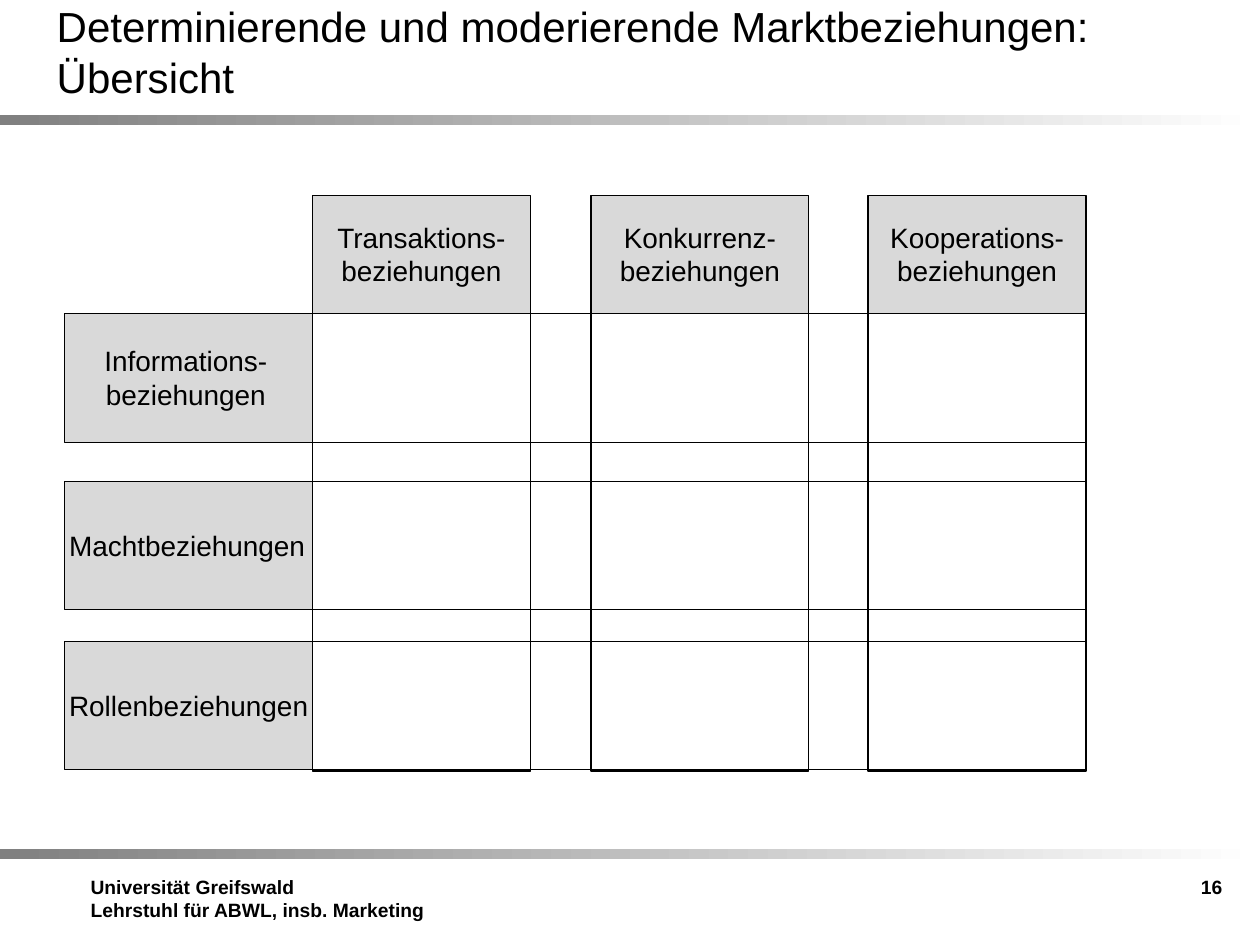
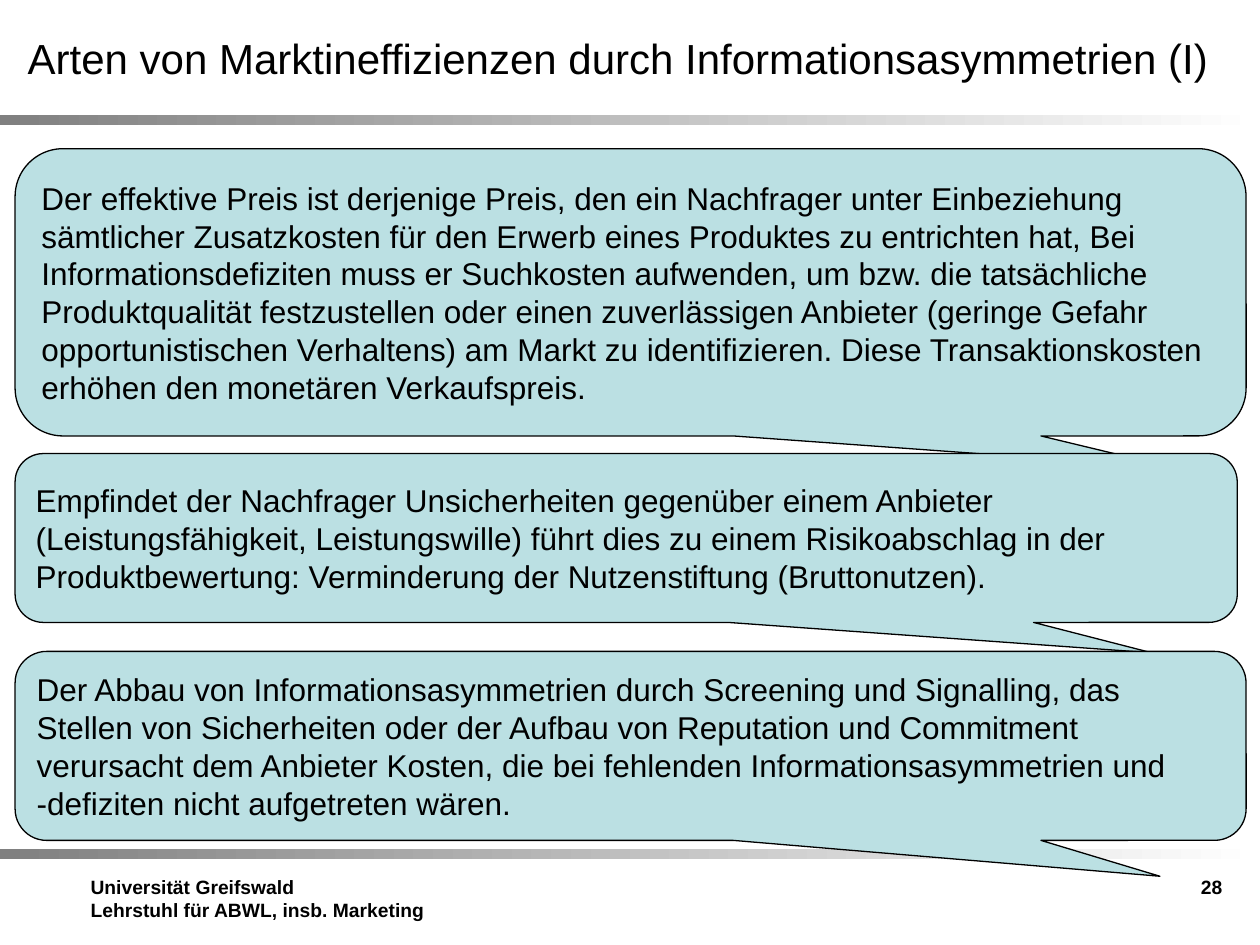
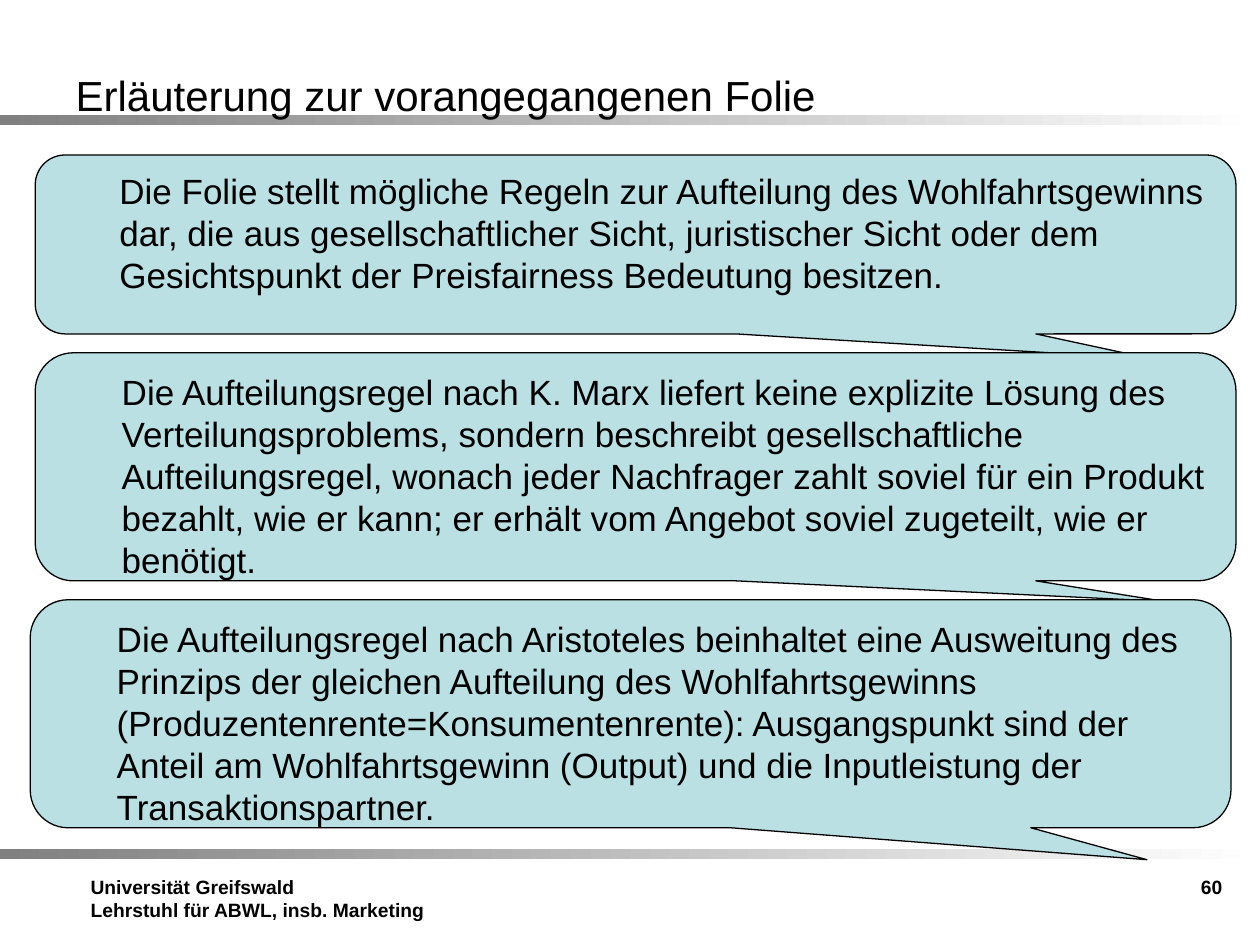
from pptx import Presentation
from pptx.dml.color import RGBColor
from pptx.enum.shapes import MSO_SHAPE
from pptx.enum.text import MSO_ANCHOR, MSO_AUTO_SIZE, PP_ALIGN
from pptx.util import Inches, Pt

BLACK, WHITE = "000000", "FFFFFF"
BAND_GREY, HEADER_GREY, CALLOUT_BLUE = "808080", "D9D9D9", "BBE0E3"
FONT = "Arial"
BAND_TOPS = (0.91, 6.74)
FOOTER = "Universität Greifswald\nLehrstuhl für ABWL, insb. Marketing"


def rgb(value):
    return RGBColor.from_string(value)


def write_text(frame, text, size=16, bold=False, align=PP_ALIGN.LEFT,
               anchor=MSO_ANCHOR.TOP, indent=0):
    frame.word_wrap = True
    frame.auto_size = MSO_AUTO_SIZE.NONE
    frame.vertical_anchor = anchor
    frame.text = text
    for paragraph in frame.paragraphs:
        paragraph.alignment = align
        if indent:
            paragraph.level = 1
            properties = paragraph._p.get_or_add_pPr()
            properties.set("marL", str(Inches(indent)))
            properties.set("indent", "0")
        paragraph.font.name = FONT
        paragraph.font.size = Pt(size)
        paragraph.font.bold = bold
        paragraph.font.color.rgb = rgb(BLACK)


class Deck:
    def __init__(self):
        self.presentation = Presentation()
        self.presentation.slide_width = Inches(10)
        self.presentation.slide_height = Inches(7.5)
        self.slide = None

    def start(self, heading, number, place, anchor=MSO_ANCHOR.MIDDLE):
        layout = self.presentation.slide_layouts[5]
        self.slide = self.presentation.slides.add_slide(layout)
        for top in BAND_TOPS:
            self.band(top)
        self.label(FOOTER, 0.62, 6.9, 2.91, 0.59, size=11, bold=True)
        self.label(number, 7.47, 6.9, 2.33, 0.57, size=11, bold=True,
                   align=PP_ALIGN.RIGHT)
        title = self.slide.shapes.title
        title.left, title.top, title.width, title.height = map(Inches, place)
        write_text(title.text_frame, heading, size=24, anchor=anchor)
        title._element.getparent().append(title._element)

    def shape(self, kind, left, top, width, height, fill=None, line=None):
        shape = self.slide.shapes.add_shape(
            kind, Inches(left), Inches(top), Inches(width), Inches(height))
        shape.shadow.inherit = False
        if fill:
            shape.fill.solid()
            shape.fill.fore_color.rgb = rgb(fill)
        else:
            shape.fill.background()
        if line:
            shape.line.color.rgb = rgb(line)
            shape.line.width = Pt(0.75)
        else:
            shape.line.fill.background()
        return shape

    def box(self, *place, **look):
        return self.shape(MSO_SHAPE.RECTANGLE, *place, **look)

    def band(self, top):
        fill = self.box(0, top, 10, 0.08).fill
        fill.gradient()
        fill.gradient_angle = 0
        for stop, color in zip(fill.gradient_stops, (BAND_GREY, WHITE)):
            stop.color.rgb = rgb(color)

    def label(self, text, left, top, width, height, **text_format):
        label = self.slide.shapes.add_textbox(
            Inches(left), Inches(top), Inches(width), Inches(height))
        write_text(label.text_frame, text, **text_format)

    def callout(self, text, place, tip, **text_format):
        callout = self.shape(MSO_SHAPE.ROUNDED_RECTANGULAR_CALLOUT, *place,
                             fill=CALLOUT_BLUE, line=BLACK)
        for index, value in enumerate(tip):
            callout.adjustments[index] = value
        write_text(callout.text_frame, text, **text_format)


def relations_overview(deck):
    deck.start("Determinierende und moderierende Marktbeziehungen: Übersicht",
               "16", (0.35, 0.09, 9, 0.63))
    column_width, header_top, header_height = 1.73, 1.55, 0.94
    row_left, row_height, header_width = 0.51, 1.02, 1.97
    columns = [("Transaktions-beziehungen", 2.48),
               ("Konkurrenz-beziehungen", 4.69),
               ("Kooperations-beziehungen", 6.89)]
    rows = [("Informations-beziehungen", 2.49, 0.49, 1.97, 0.64, PP_ALIGN.CENTER),
            ("Machtbeziehungen", 3.82, 0.45, 2.13, 0.37, PP_ALIGN.LEFT),
            ("Rollenbeziehungen", 5.09, 0.45, 2.13, 0.37, PP_ALIGN.LEFT)]

    for relation, left in columns:
        deck.box(left, header_top, column_width, header_height, fill=HEADER_GREY)
    for relation, top, *rest in rows:
        deck.box(row_left, top, header_width, row_height, fill=HEADER_GREY)
    for relation, left in columns:
        deck.box(left, header_top, column_width, 4.57, line=BLACK)
        deck.label(relation, left, 1.7, column_width, 0.64,
                   align=PP_ALIGN.CENTER)
    for relation, top, left, width, height, align in rows:
        deck.box(row_left, top, 8.11, row_height, line=BLACK)
        deck.label(relation, left, top + (row_height - height) / 2,
                   width, height, align=align)


def market_inefficiencies(deck):
    deck.start("Arten von Marktineffizienzen durch Informationsasymmetrien (I)",
               "28", (0.12, 0.21, 9.77, 0.63), anchor=MSO_ANCHOR.TOP)
    explanations = [
        ("Der effektive Preis ist derjenige Preis, den ein Nachfrager unter "
         "Einbeziehung sämtlicher Zusatzkosten für den Erwerb eines Produktes zu "
         "entrichten hat, Bei Informationsdefiziten muss er Suchkosten aufwenden, "
         "um bzw. die tatsächliche Produktqualität festzustellen oder einen "
         "zuverlässigen Anbieter (geringe Gefahr opportunistischen Verhaltens) am "
         "Markt zu identifizieren. Diese Transaktionskosten erhöhen den monetären "
         "Verkaufspreis.",
         (0.12, 1.18, 9.77, 2.28), (0.44, 0.61)),
        ("Empfindet der Nachfrager Unsicherheiten gegenüber einem Anbieter "
         "(Leistungsfähigkeit, Leistungswille) führt dies zu einem Risikoabschlag "
         "in der Produktbewertung: Verminderung der Nutzenstiftung (Bruttonutzen).",
         (0.12, 3.6, 9.7, 1.34), (0.43, 0.68)),
        ("Der Abbau von Informationsasymmetrien durch Screening und Signalling, "
         "das Stellen von Sicherheiten oder der Aufbau von Reputation und "
         "Commitment verursacht dem Anbieter Kosten, die bei fehlenden "
         "Informationsasymmetrien und -defiziten nicht aufgetreten wären.",
         (0.12, 5.17, 9.77, 1.5), (0.43, 0.69)),
    ]
    for text, place, tip in explanations:
        deck.callout(text, place, tip, size=18, anchor=MSO_ANCHOR.MIDDLE)


def sharing_rules(deck):
    deck.start("Erläuterung zur vorangegangenen Folie", "60", (0.5, 0.44, 9, 0.63))
    rules = [
        ("Die Folie stellt mögliche Regeln zur Aufteilung des Wohlfahrtsgewinns "
         "dar, die aus gesellschaftlicher Sicht, juristischer Sicht oder dem "
         "Gesichtspunkt der Preisfairness Bedeutung besitzen.",
         (0.28, 1.23, 9.53, 1.42), (0.43, 0.64)),
        ("Die Aufteilungsregel nach K. Marx liefert keine explizite Lösung des "
         "Verteilungsproblems, sondern beschreibt gesellschaftliche "
         "Aufteilungsregel, wonach jeder Nachfrager zahlt soviel für ein Produkt "
         "bezahlt, wie er kann; er erhält vom Angebot soviel zugeteilt, wie er "
         "benötigt.",
         (0.28, 2.8, 9.53, 1.81), (0.44, 0.59)),
        ("Die Aufteilungsregel nach Aristoteles beinhaltet eine Ausweitung des "
         "Prinzips der gleichen Aufteilung des Wohlfahrtsgewinns "
         "(Produzentenrente=Konsumentenrente): Ausgangspunkt sind der Anteil am "
         "Wohlfahrtsgewinn (Output) und die Inputleistung der "
         "Transaktionspartner.",
         (0.24, 4.76, 9.53, 1.81), (0.43, 0.64)),
    ]
    for text, place, tip in rules:
        deck.callout(text, place, tip, size=20, indent=0.5)


def main():
    deck = Deck()
    relations_overview(deck)
    market_inefficiencies(deck)
    sharing_rules(deck)
    deck.presentation.save("out.pptx")


if __name__ == "__main__":
    main()
